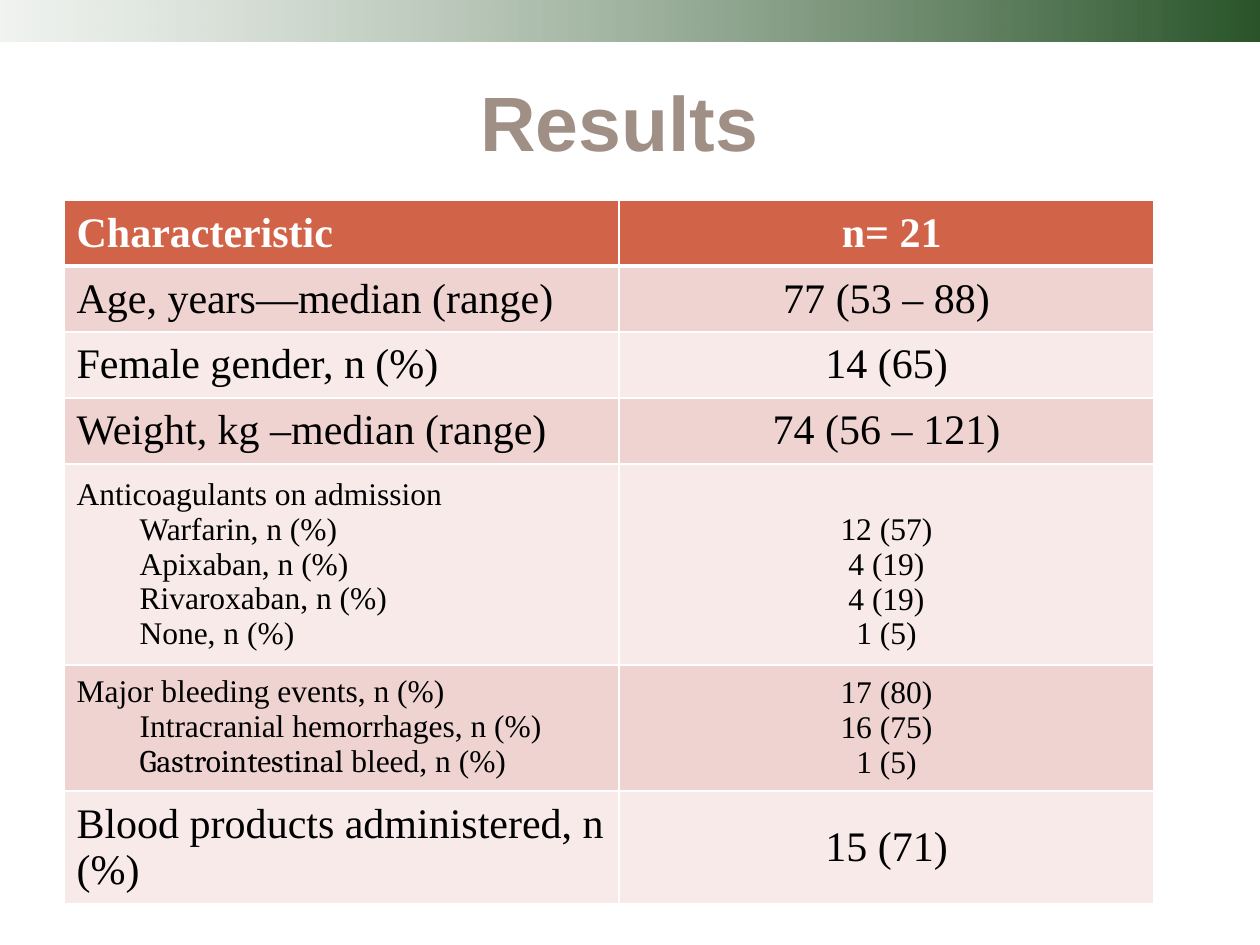
"""Build the Results slide: a gradient band, a title and a table of patient characteristics."""
from dataclasses import dataclass

from lxml.etree import SubElement
from pptx import Presentation
from pptx.dml.color import RGBColor as RGB
from pptx.enum.shapes import MSO_SHAPE as SHAPE
from pptx.enum.text import MSO_ANCHOR as ANCHOR, PP_ALIGN as ALIGN
from pptx.oxml.ns import qn
from pptx.util import Emu, Pt


@dataclass(frozen=True)
class Theme:
    title_font: str = "Arial"
    body_font: str = "Times New Roman"
    alt_font: str = "Cambria"
    title_size: int = 44
    large: int = 24
    small: int = 18
    header: str = "D16349"
    bands: tuple = ("EED3D0", "F7EAE9")
    white: str = "FFFFFF"
    black: str = "000000"
    title_stops: tuple = ((0, "BFAFA6", 100), (40, "A08F85", 100), (50, "A08F85", 100),
                          (68, "A08F85", 100), (100, "BFAFA6", 100))
    band_stops: tuple = ((0, "668566", 10), (100, "003300", 84))


@dataclass(frozen=True)
class Line:
    text: str
    indent: int = 0
    lead: str = ""


@dataclass(frozen=True)
class Row:
    height: int
    labels: tuple
    values: tuple
    size: int
    value_drop: int = 0


T = Theme()
COLUMNS = (555, 535)
INDENT = 63
LINE_HEIGHT = 35
CELL_MARGIN = 6

ROWS = (
    Row(66, (Line("Characteristic"),), (Line(" n= 21"),), T.large),
    Row(66, (Line("Age, years—median (range)"),), (Line("77 (53 – 88)"),), T.large),
    Row(66, (Line("Female gender, n (%)"),), (Line("14 (65)"),), T.large),
    Row(66, (Line("Weight, kg –median (range)"),), (Line("74 (56 – 121)"),), T.large),
    Row(198,
        (Line("Anticoagulants on admission"), Line("Warfarin, n (%)", INDENT),
         Line("Apixaban, n (%)", INDENT), Line("Rivaroxaban, n (%)", INDENT),
         Line("None, n (%)", INDENT)),
        (Line("12 (57)"), Line("4 (19)"), Line("4 (19)"), Line("1 (5)")),
        T.small, LINE_HEIGHT),
    Row(118,
        (Line("Major bleeding events, n (%)"), Line("Intracranial hemorrhages, n (%)", INDENT),
         Line(" bleed, n (%)", INDENT, "Gastrointestinal")),
        (Line("17 (80)"), Line("16 (75)"), Line("1 (5)")), T.small),
    Row(105, (Line("Blood products administered, n (%)"),), (Line("15 (71)"),), T.large),
)


def px(n: int) -> Emu:
    return Emu(round(n * 914400 / 126))


def set_gradient(fill, props, stops: tuple, angle: int) -> None:
    fill.gradient()
    grad = props.find(qn("a:gradFill"))
    for child in list(grad):
        grad.remove(child)
    stop_list = SubElement(grad, qn("a:gsLst"))
    for pos, color, alpha in stops:
        stop = SubElement(stop_list, qn("a:gs"), pos=str(pos * 1000))
        clr = SubElement(stop, qn("a:srgbClr"), val=color)
        if alpha < 100:
            SubElement(clr, qn("a:alpha"), val=str(alpha * 1000))
    SubElement(grad, qn("a:lin"), ang=str(angle * 60000), scaled="0")


def add_run(p, text: str, *, font: str, size: int, bold: bool = False, color: str = ""):
    r = p.add_run()
    r.text = text
    r.font.name, r.font.size, r.font.bold = font, Pt(size), bold
    if color:
        r.font.color.rgb = RGB.from_string(color)
    return r


def set_borders(cell, bottom: int) -> None:
    tc_pr = cell._tc.get_or_add_tcPr()
    for side, width in (("L", 1), ("R", 1), ("T", 1), ("B", bottom)):
        ln = SubElement(tc_pr, qn(f"a:ln{side}"), w=str(Pt(width)))
        SubElement(SubElement(ln, qn("a:solidFill")), qn("a:srgbClr"), val=T.white)


def fill_cell(cell, lines: tuple, *, size: int, align: ALIGN, is_header: bool,
              fill: str, drop: int = 0) -> None:
    set_borders(cell, 3 if is_header else 1)
    cell.fill.solid()
    cell.fill.fore_color.rgb = RGB.from_string(fill)
    cell.vertical_anchor = ANCHOR.MIDDLE
    cell.margin_top = px(CELL_MARGIN + drop)
    style = dict(size=size, bold=is_header, color=T.white if is_header else T.black)
    tf = cell.text_frame
    for i, line in enumerate(lines):
        p = tf.add_paragraph() if i else tf.paragraphs[0]
        p.alignment = align
        if line.indent:
            p.level = 1
            p_pr = p._p.get_or_add_pPr()
            p_pr.set("marL", str(px(line.indent)))
            p_pr.set("indent", "0")
        if line.lead:
            add_run(p, line.lead, font=T.alt_font, **style)
        add_run(p, line.text, font=T.body_font, **style)


def add_title(s, text: str) -> None:
    tf = s.shapes.add_textbox(px(0), px(42), px(1260), px(157)).text_frame
    tf.word_wrap = True
    tf.vertical_anchor = ANCHOR.MIDDLE
    p = tf.paragraphs[0]
    p.alignment = ALIGN.CENTER
    r = add_run(p, text, font=T.title_font, size=T.title_size, bold=True)
    set_gradient(r.font.fill, r._r.get_or_add_rPr(), T.title_stops, 90)


def add_band(s) -> None:
    sp = s.shapes.add_shape(SHAPE.RECTANGLE, px(0), px(0), px(1260), px(42))
    sp.shadow.inherit = False
    sp.line.fill.background()
    set_gradient(sp.fill, sp._element.spPr, T.band_stops, 0)


def add_results(s, rows: tuple) -> None:
    height = sum(row.height for row in rows)
    table = s.shapes.add_table(len(rows), len(COLUMNS), px(64), px(200),
                               px(sum(COLUMNS)), px(height)).table
    for column, width in zip(table.columns, COLUMNS):
        column.width = px(width)
    for i, row in enumerate(rows):
        table.rows[i].height = px(row.height)
        style = dict(size=row.size, is_header=i == 0,
                     fill=T.bands[(i - 1) % 2] if i else T.header)
        fill_cell(table.cell(i, 0), row.labels, align=ALIGN.LEFT, **style)
        fill_cell(table.cell(i, 1), row.values, align=ALIGN.CENTER, drop=row.value_drop, **style)


def main() -> None:
    prs = Presentation()
    prs.slide_width, prs.slide_height = px(1260), px(945)
    s = prs.slides.add_slide(prs.slide_layouts[6])
    add_title(s, "Results ")
    add_band(s)
    add_results(s, ROWS)
    prs.save("out.pptx")


if __name__ == "__main__":
    main()
